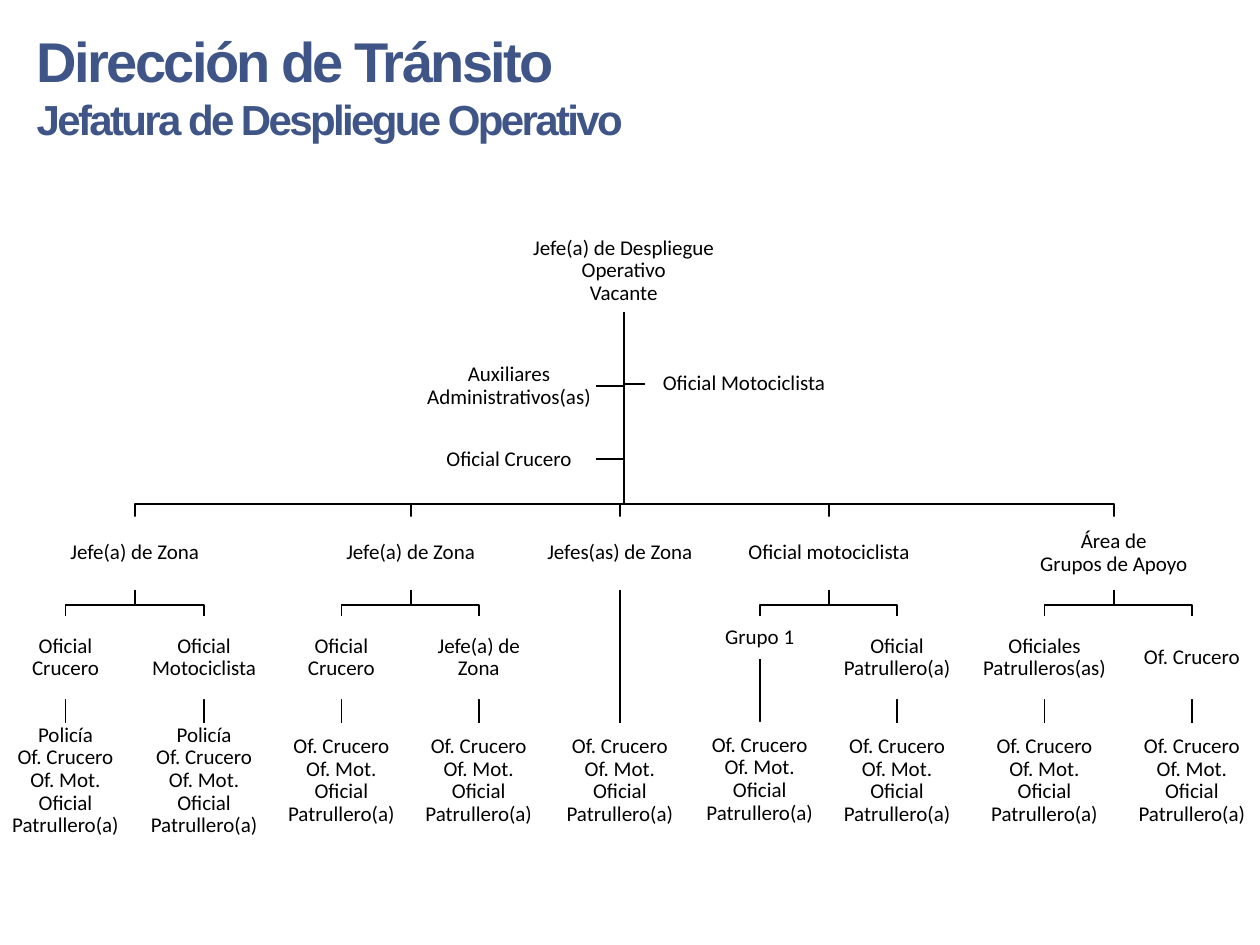
import pptx
import pptx.util
import pptx.dml.color
import pptx.enum.text
import pptx.enum.shapes
import pptx.oxml.ns
from lxml import etree

Inches = pptx.util.Inches
COLORS = {"title": "3F5588", "ink": "000000", "paper": "FFFFFF"}
ALIGN = pptx.enum.text.PP_ALIGN
ANCHOR = pptx.enum.text.MSO_ANCHOR

TRUNK_X, TRUNK_TOP, BRANCH_Y = 4.95, 2.48, 4.0
ZONE_TOP, ZONE_BOTTOM, ZONE_WIDTH = 4.1, 4.68, 1.36
FORK_Y, UNIT_TOP, UNIT_BOTTOM = 4.8, 4.89, 5.55
SQUAD_TOP, SQUAD_HEIGHT, UNIT_WIDTH = 5.74, 0.91, 0.9

SQUAD = ["Of. Crucero", "Of. Mot.", "Oficial Patrullero(a)"]
POLICE_SQUAD = ["Policía"] + SQUAD

ZONES = [
    (1.07, ["Jefe(a) de Zona"], [
        (0.52, ["Oficial", "Crucero"], POLICE_SQUAD, {}),
        (1.62, ["Oficial", "Motociclista"], POLICE_SQUAD, {})]),
    (3.26, ["Jefe(a) de Zona"], [
        (2.71, ["Oficial", "Crucero"], SQUAD, {}),
        (3.8, ["Jefe(a) de Zona"], SQUAD, {})]),
    (4.92, ["Jefes(as) de Zona"], []),
    (6.58, ["Oficial motociclista"], [
        (6.03, ["Grupo 1"], SQUAD, {"bottom": 5.23, "squad_top": 5.73}),
        (7.12, ["Oficial", "Patrullero(a)"], SQUAD, {})]),
    (8.84, ["Área de", "Grupos de Apoyo"], [
        (8.29, ["Oficiales", "Patrulleros(as)"], SQUAD, {"width": 1.05}),
        (9.46, ["Of. Crucero"], SQUAD, {})]),
]

ASSISTANTS = [
    (["Auxiliares Administrativos(as)"], 3.35, 2.81, 1.38, 4.73),
    (["Oficial Motociclista"], 5.12, 2.79, 1.57, 5.12),
    (["Oficial Crucero"], 3.35, 3.39, 1.38, 4.73),
]
ASSISTANT_HEIGHT = 0.51


def rgb(name):
    return pptx.dml.color.RGBColor.from_string(COLORS[name])


def write_text(frame, lines, sizes=(12,), font="Calibri", color="ink", bold=False,
               align=ALIGN.CENTER, spacing=0.9, tracking=0):
    for index, line in enumerate(lines):
        paragraph = frame.paragraphs[0] if index == 0 else frame.add_paragraph()
        paragraph.alignment = align
        paragraph.line_spacing = spacing
        paragraph.space_before = pptx.util.Pt(0)
        run = paragraph.add_run()
        run.text = line
        run.font.size = pptx.util.Pt(sizes[index % len(sizes)])
        run.font.name = font
        run.font.bold = bold
        run.font.color.rgb = rgb(color)
        if tracking:
            run.font._element.set("spc", str(int(tracking * 100)))


class OrgChart:
    def __init__(self, slide):
        self.slide = slide
        self.line_width = pptx.util.Pt(1)
        self.inset = Inches(0.01)

    def title(self, lines):
        heading = self.slide.shapes.title
        heading.left, heading.top = Inches(0.19), Inches(0.16)
        heading.width, heading.height = Inches(7.46), Inches(1.04)
        frame = heading.text_frame
        frame.auto_size = pptx.enum.text.MSO_AUTO_SIZE.NONE
        frame.vertical_anchor = ANCHOR.TOP
        write_text(frame, lines, sizes=(32, 24), font="Arial", color="title",
                   bold=True, align=ALIGN.LEFT, spacing=1.0, tracking=-1.5)

    def box(self, lines, left, top, width, height):
        card = self.slide.shapes.add_shape(
            pptx.enum.shapes.MSO_SHAPE.RECTANGLE,
            Inches(left), Inches(top), Inches(width), Inches(height))
        card.shadow.inherit = False
        card.fill.solid()
        card.fill.fore_color.rgb = rgb("paper")
        card.line.fill.background()
        frame = card.text_frame
        frame.word_wrap = True
        frame.vertical_anchor = ANCHOR.MIDDLE
        frame.margin_left = frame.margin_right = self.inset
        frame.margin_top = frame.margin_bottom = self.inset
        write_text(frame, lines)

    def centered_box(self, lines, center, top, width, height):
        self.box(lines, center - width / 2, top, width, height)

    def drop(self, x, top, bottom):
        link = self.slide.shapes.add_connector(
            pptx.enum.shapes.MSO_CONNECTOR.STRAIGHT,
            Inches(x), Inches(top), Inches(x), Inches(bottom))
        link.line.color.rgb = rgb("ink")
        link.line.width = self.line_width
        etree.SubElement(link._element.spPr, pptx.oxml.ns.qn("a:effectLst"))

    def elbow(self, *points):
        corners = [(Inches(x), Inches(y)) for x, y in points]
        builder = self.slide.shapes.build_freeform(*corners[0])
        builder.add_line_segments(corners[1:], close=False)
        bend = builder.convert_to_shape()
        bend.shadow.inherit = False
        bend.fill.background()
        bend.line.color.rgb = rgb("ink")
        bend.line.width = self.line_width

    def fork(self, start_x, start_y, bend_y, end_x, end_y):
        self.elbow((start_x, start_y), (start_x, bend_y), (end_x, bend_y), (end_x, end_y))

    def unit(self, center, lines, squad, width=UNIT_WIDTH, bottom=UNIT_BOTTOM,
             squad_top=SQUAD_TOP):
        self.drop(center, bottom, squad_top)
        self.centered_box(lines, center, UNIT_TOP, width, bottom - UNIT_TOP)
        self.centered_box(squad, center, squad_top, UNIT_WIDTH, SQUAD_HEIGHT)

    def zone(self, center, lines, units):
        self.fork(TRUNK_X, TRUNK_TOP, BRANCH_Y, center, ZONE_TOP)
        self.centered_box(lines, center, ZONE_TOP, ZONE_WIDTH, ZONE_BOTTOM - ZONE_TOP)
        for unit_center, unit_lines, squad, layout in units:
            self.fork(center, ZONE_BOTTOM, FORK_Y, unit_center, UNIT_TOP)
            self.unit(unit_center, unit_lines, squad, **layout)
        if not units:
            self.drop(center, ZONE_BOTTOM, SQUAD_TOP)
            self.centered_box(SQUAD, center, SQUAD_TOP, 0.94, SQUAD_HEIGHT)

    def assistant(self, lines, left, top, width, edge):
        middle = top + ASSISTANT_HEIGHT / 2
        self.elbow((TRUNK_X, TRUNK_TOP), (TRUNK_X, middle), (edge, middle))
        self.box(lines, left, top, width, ASSISTANT_HEIGHT)


def main():
    deck = pptx.Presentation()
    deck.slide_width, deck.slide_height = Inches(10), Inches(7.5)
    chart = OrgChart(deck.slides.add_slide(deck.slide_layouts[5]))
    chart.title(["Dirección de Tránsito", "Jefatura de Despliegue Operativo"])
    chart.centered_box(["Jefe(a) de Despliegue", "Operativo", "Vacante"],
                       TRUNK_X, 1.82, 2.52, TRUNK_TOP - 1.82)
    for zone in ZONES:
        chart.zone(*zone)
    for assistant in ASSISTANTS:
        chart.assistant(*assistant)
    deck.save("out.pptx")


if __name__ == "__main__":
    main()
